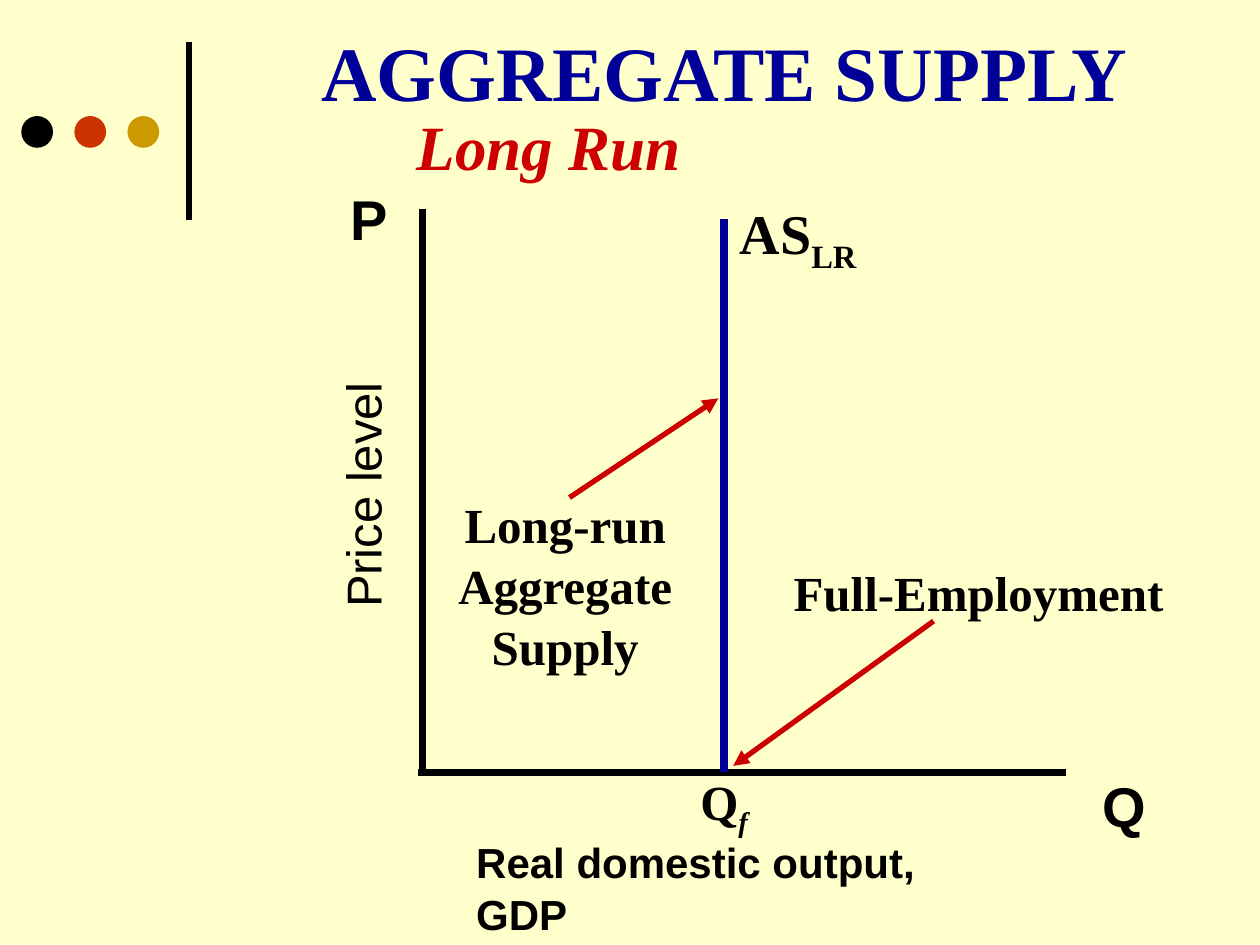
from lxml import etree
from pptx import Presentation
from pptx import util as u
from pptx.dml.color import RGBColor
from pptx.enum import shapes, text
from pptx.oxml.ns import qn

BLACK, NAVY, RED = "000000", "000099", "CC0000"
SERIF, SANS = "Times New Roman", "Arial"


def colour(hex_value):
    return RGBColor.from_string(hex_value)


def cm(*lengths):
    return [u.Cm(length) for length in lengths]


def add_run(paragraph, wording, style, hex_value, subscript=False):
    run = paragraph.add_run()
    run.text = wording
    for attribute, value in style.items():
        setattr(run.font, attribute, value)
    run.font.color.rgb = colour(hex_value)
    if subscript:
        run.font._element.set("baseline", "-25000")


def write(frame, lines, style, hex_value=BLACK, align=text.PP_ALIGN.LEFT,
          wrap=False, subscript=None):
    """Fill a text frame; subscript is (wording, extra font values)."""
    frame_format = {
        "word_wrap": wrap,
        "auto_size": text.MSO_AUTO_SIZE.NONE,
        "vertical_anchor": text.MSO_ANCHOR.TOP,
    }
    for attribute, value in frame_format.items():
        setattr(frame, attribute, value)
    for index, wording in enumerate(lines):
        paragraph = frame.paragraphs[0] if index == 0 else frame.add_paragraph()
        paragraph.alignment = align
        paragraph.line_spacing = 1.04
        add_run(paragraph, wording, style, hex_value)
    if subscript:
        wording, extra = subscript
        add_run(paragraph, wording, {**style, **extra}, hex_value, True)


def font(name, points, bold=True, italic=False):
    return {"name": name, "size": u.Pt(points), "bold": bold, "italic": italic}


def add_title(slide, wording):
    title = slide.shapes.title
    title.left, title.top, title.width, title.height = cm(6.22, 0.3, 17.02, 2.11)
    write(title.text_frame, [wording], font(SERIF, 44), NAVY)


def add_label(slide, box, lines, style, rotation=0, **options):
    label = slide.shapes.add_textbox(*cm(*box))
    label.rotation = rotation
    write(label.text_frame, lines, style, **options)


def add_line(slide, start, end, hex_value, points, arrow=False):
    line = slide.shapes.add_connector(
        shapes.MSO_CONNECTOR.STRAIGHT, *cm(*start, *end))
    line.line.color.rgb = colour(hex_value)
    line.line.width = u.Pt(points)
    if arrow:
        etree.SubElement(line.line._get_or_add_ln(), qn("a:tailEnd"),
                         type="triangle")
    etree.SubElement(line._element.spPr, qn("a:effectLst"))


def add_dot(slide, left, hex_value):
    dot = slide.shapes.add_shape(
        shapes.MSO_SHAPE.OVAL, *cm(left, 2.34, 0.64, 0.64))
    dot.shadow.inherit = False
    dot.fill.solid()
    dot.fill.fore_color.rgb = colour(hex_value)
    dot.line.fill.background()


def add_ornament(slide):
    add_line(slide, (3.81, 4.44), (3.81, 0.84), BLACK, 3)
    for index, hex_value in enumerate((BLACK, "CC3300", "CC9900")):
        add_dot(slide, 0.43 + 1.07 * index, hex_value)


def add_axes(slide):
    add_line(slide, (8.51, 4.22), (8.51, 15.6), BLACK, 4)
    add_line(slide, (8.43, 15.57), (21.49, 15.57), BLACK, 4)
    axis_letter = font(SANS, 32)
    add_label(slide, (21.97, 15.38, 1.37, 1.6), ["Q"], axis_letter)
    add_label(slide, (6.81, 3.55, 1.24, 1.6), ["P"], axis_letter)
    add_label(slide, (4.72, 9.27, 5.05, 1.42), ["Price level"],
              font(SANS, 28, bold=False), rotation=270)
    add_label(slide, (9.35, 16.7, 11.3, 1.27), ["Real domestic output, GDP"],
              font(SANS, 24), wrap=True)


def add_supply_curve(slide):
    note = font(SERIF, 28)
    add_line(slide, (14.6, 4.42), (14.6, 15.57), NAVY, 4.5)
    add_label(slide, (14.66, 3.82, 2.97, 1.6), ["AS"], font(SERIF, 32),
              subscript=("LR", {}))
    add_label(slide, (8.97, 9.8, 4.85, 3.81),
              ["Long-run", "Aggregate", "Supply"], note,
              align=text.PP_ALIGN.CENTER)
    add_line(slide, (11.48, 10.03), (14.48, 8.03), RED, 3, arrow=True)
    add_label(slide, (13.87, 15.38, 1.5, 1.45), ["Q"], note,
              subscript=("f", {"italic": True}))
    add_label(slide, (15.75, 11.17, 7.98, 1.45), ["Full-Employment"], note)
    add_line(slide, (18.82, 12.52), (14.78, 15.44), RED, 3, arrow=True)


def main():
    deck = Presentation()
    deck.slide_width, deck.slide_height = cm(25.4, 19.05)
    slide = deck.slides.add_slide(deck.slide_layouts[5])
    slide.background.fill.solid()
    slide.background.fill.fore_color.rgb = colour("FFFFCC")
    add_ornament(slide)
    add_title(slide, "AGGREGATE SUPPLY")
    add_label(slide, (8.15, 1.98, 5.84, 1.78), ["Long Run"],
              font(SERIF, 36, italic=True), hex_value=RED)
    add_axes(slide)
    add_supply_curve(slide)
    deck.save("out.pptx")


if __name__ == "__main__":
    main()
